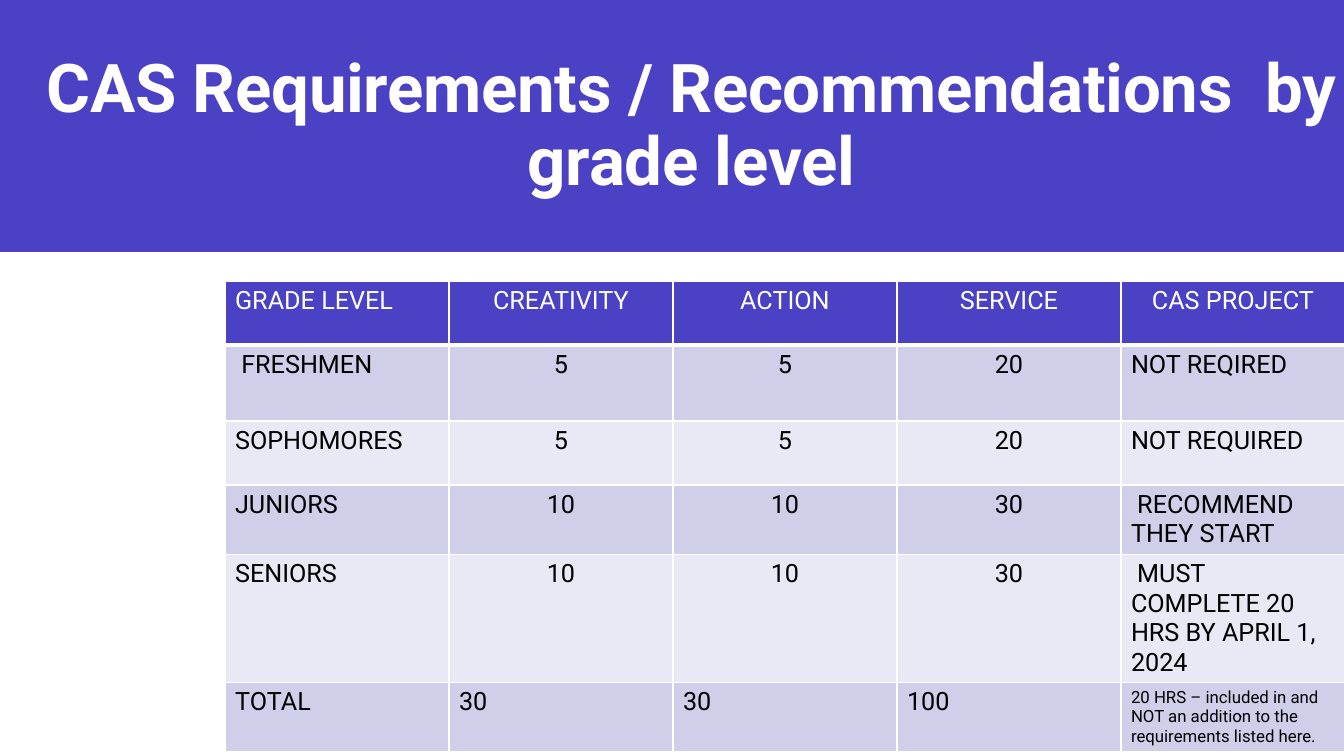
from lxml.etree import SubElement
from pptx import Presentation
from pptx.dml.color import RGBColor
from pptx.enum.shapes import MSO_SHAPE
from pptx.enum.text import MSO_ANCHOR, MSO_AUTO_SIZE, PP_ALIGN
from pptx.oxml.ns import qn
from pptx.util import Emu, Pt

TITLE = "CAS Requirements / Recommendations  by grade level"
HEADER = ("GRADE LEVEL", "CREATIVITY", "ACTION", "SERVICE", "CAS PROJECT")
GRADES = [
    (" FRESHMEN", "5", "5", "20", "NOT REQIRED"),
    ("SOPHOMORES", "5", "5", "20", "NOT REQUIRED"),
    ("JUNIORS", "10", "10", "30", " RECOMMEND THEY START"),
    ("SENIORS", "10", "10", "30", " MUST COMPLETE 20 HRS BY APRIL 1, 2024"),
]
TOTAL = ("TOTAL", "30", "30", "100",
         "20 HRS – included in and NOT an addition to the requirements listed here.")
FOOTER = "`"

COLORS = {"indigo": "4A41C5", "odd": "D0CFEA", "even": "E9E9F5",
          "white": "FFFFFF", "black": "000000"}
FONT = "Roboto"
PX = 914400 / 100.8
SLIDE = (1344, 756)
BAND = (0, 0, 1344, 252)
TITLE_BOX = (25, 40, 1333, 165)
TABLE_AT = (225, 281)
COLUMN = 224
ROWS = (64, 76, 64, 68, 126, 64)
FOOTER_BOX = (773, 701, 480, 40)


def px(*lengths):
    return [Emu(round(length * PX)) for length in lengths]


def rgb(name):
    return RGBColor.from_string(COLORS[name])


def style(paragraph, size, color, align=None, bold=None):
    paragraph.alignment = align
    font = paragraph.font
    font.name, font.size, font.bold = FONT, Pt(size), bold
    font.color.rgb = rgb(color)


def add_borders(cell, bottom):
    """White cell borders, 1 pt wide except for the bottom one."""
    properties = cell._tc.get_or_add_tcPr()
    widths = {"lnL": 1, "lnR": 1, "lnT": 1, "lnB": bottom}
    for position, (side, width) in enumerate(widths.items()):
        line = SubElement(properties, qn(f"a:{side}"), w=str(Pt(width)))
        fill = SubElement(line, qn("a:solidFill"))
        SubElement(fill, qn("a:srgbClr"), val=COLORS["white"])
        properties.insert(position, line)


def add_title(slide):
    band = slide.shapes.add_shape(MSO_SHAPE.RECTANGLE, *px(*BAND))
    band.shadow.inherit = False
    band.fill.solid()
    band.fill.fore_color.rgb = rgb("indigo")
    band.line.fill.background()
    title = slide.shapes.title
    band._element.addnext(title._element)
    title.left, title.top, title.width, title.height = px(*TITLE_BOX)
    frame = title.text_frame
    frame.text = TITLE
    frame.word_wrap = True
    frame.auto_size = MSO_AUTO_SIZE.NONE
    frame.vertical_anchor = MSO_ANCHOR.BOTTOM
    heading = frame.paragraphs[0]
    heading.line_spacing = 0.9
    style(heading, 48, "white", PP_ALIGN.CENTER, True)
    heading.runs[0].font._element.set("spc", "-20")


def add_requirements(slide):
    rows = [HEADER, *GRADES, TOTAL]
    size = px(COLUMN * len(HEADER), sum(ROWS))
    table = slide.shapes.add_table(len(rows), len(HEADER), *px(*TABLE_AT), *size).table
    for column in table.columns:
        column.width = px(COLUMN)[0]
    for r, (row, height) in enumerate(zip(rows, ROWS)):
        table.rows[r].height = px(height)[0]
        is_header, is_total = row is HEADER, row is TOTAL
        fill = "indigo" if is_header else "odd" if r % 2 else "even"
        for c, text in enumerate(row):
            cell = table.cell(r, c)
            cell.text = text
            cell.fill.solid()
            cell.fill.fore_color.rgb = rgb(fill)
            is_last = c == len(row) - 1
            centred = c > 0 and not is_total and (is_header or not is_last)
            style(cell.text_frame.paragraphs[0],
                  12 if is_total and is_last else 18,
                  "white" if is_header else "black",
                  PP_ALIGN.CENTER if centred else PP_ALIGN.LEFT)
            add_borders(cell, 3 if is_header else 1)


def add_footer(slide):
    frame = slide.shapes.add_textbox(*px(*FOOTER_BOX)).text_frame
    frame.text = FOOTER
    frame.word_wrap = True
    frame.vertical_anchor = MSO_ANCHOR.MIDDLE
    style(frame.paragraphs[0], 10.5, "black", PP_ALIGN.RIGHT)


def main():
    deck = Presentation()
    deck.slide_width, deck.slide_height = px(*SLIDE)
    slide = deck.slides.add_slide(deck.slide_layouts.get_by_name("Title Only"))
    add_title(slide)
    add_requirements(slide)
    add_footer(slide)
    deck.save("out.pptx")


if __name__ == "__main__":
    main()
